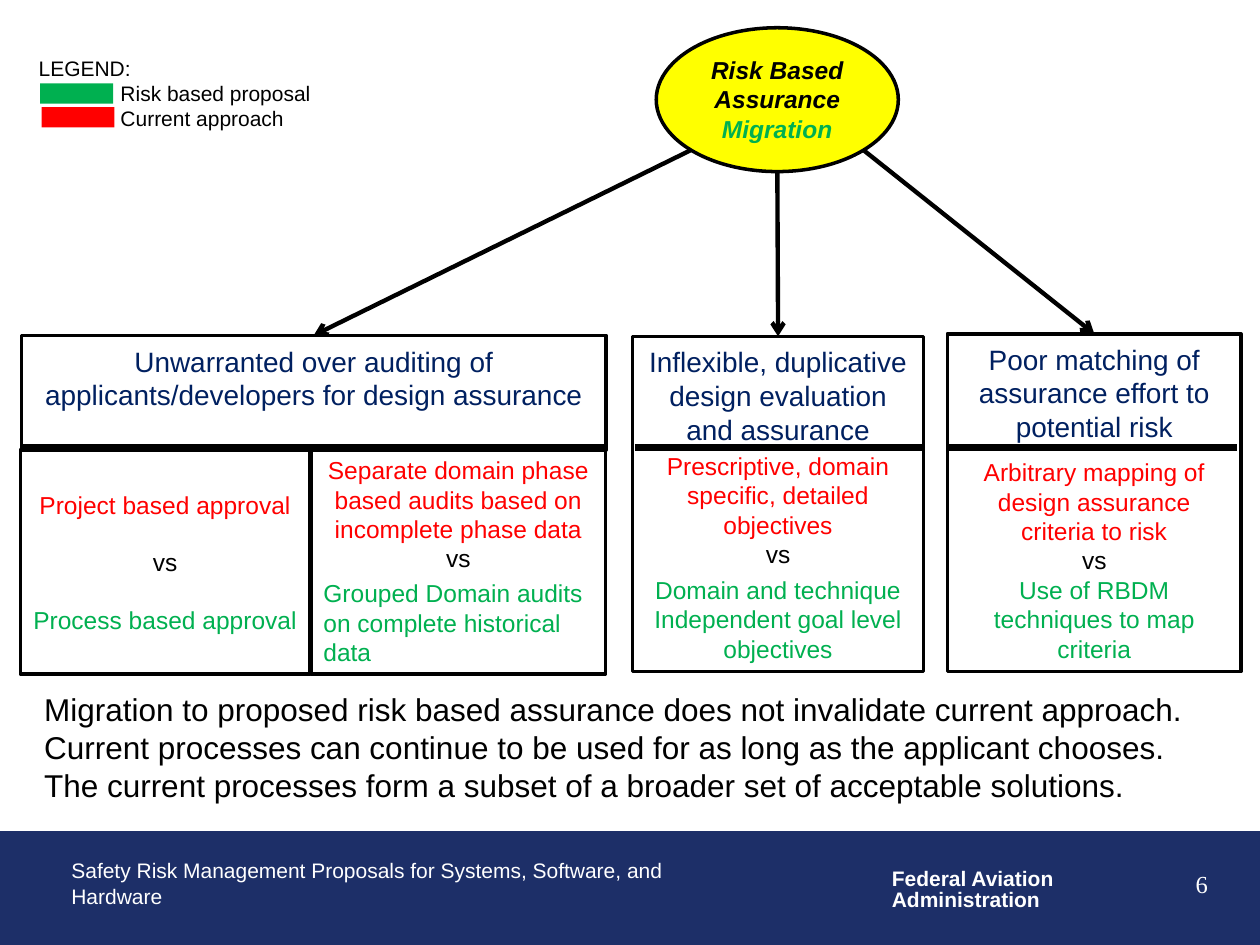
from lxml import etree
from pptx import Presentation
from pptx.dml.color import RGBColor
from pptx.enum.shapes import MSO_CONNECTOR, MSO_SHAPE
from pptx.enum.text import MSO_ANCHOR, PP_ALIGN
from pptx.oxml.ns import qn
from pptx.util import Cm, Pt

RECT, OVAL = MSO_SHAPE.RECTANGLE, MSO_SHAPE.OVAL
STRAIGHT = MSO_CONNECTOR.STRAIGHT
LEFT, CENTER, RIGHT = PP_ALIGN.LEFT, PP_ALIGN.CENTER, PP_ALIGN.RIGHT
TOP, MIDDLE = MSO_ANCHOR.TOP, MSO_ANCHOR.MIDDLE

BLACK, WHITE, NAVY, BAND = "000000", "FFFFFF", "002060", "1D2F68"
RED, GREEN, YELLOW = "FF0000", "00B050", "FFFF00"

# Boxes are (left, top, width, height) in cm.
ROOT_BOX = (13.23, 0.56, 4.88, 2.9)
ROOT_RUNS = [("Risk Based Assurance ", BLACK), ("Migration", GREEN)]

# Each problem: box, heading, space before the comparison, current approach, proposal.
PROBLEMS = [
    ((0.43, 6.76, 11.79, 2.31),
     "Unwarranted over auditing of applicants/developers for design assurance", []),
    ((12.75, 6.78, 5.87, 6.76),
     "Inflexible, duplicative design evaluation and assurance",
     [("Prescriptive, domain specific, detailed objectives", RED, 3, CENTER),
      ("vs", BLACK, 0, CENTER),
      ("Domain and technique Independent goal level objectives", GREEN, 3.5, CENTER)]),
    ((19.1, 6.73, 5.92, 6.81),
     "Poor matching of assurance effort to potential risk",
     [("Arbitrary mapping of design assurance criteria to risk", RED, 8, CENTER),
      ("vs", BLACK, 0, CENTER),
      ("Use of RBDM techniques to map criteria", GREEN, 0, CENTER)]),
]
AUDIT_DETAILS = [
    ((0.41, 9.07, 5.84, 4.52),
     [("Project based approval", RED, 0, CENTER),
      ("vs", BLACK, 16, CENTER),
      ("Process based approval", GREEN, 16, CENTER)]),
    ((6.27, 9.02, 5.94, 4.57),
     [("Separate domain phase based audits based on incomplete phase data",
       RED, 0, CENTER),
      ("vs", BLACK, 0, CENTER),
      ("Grouped Domain audits on complete historical data", GREEN, 3, LEFT)]),
]
ARROW_STARTS = [(13.94, 3.02), (15.67, 3.44), (17.4, 3.02)]
DIVIDERS = [(0.43, 12.19), (12.8, 18.64), (19.1, 24.94)]
DIVIDER_TOP = 9.03

LEGEND = [("Risk based proposal", GREEN, (0.81, 1.68)),
          ("Current approach", RED, (0.84, 2.16))]
SUMMARY = ("Migration to proposed risk based assurance does not invalidate current "
           "approach. Current processes can continue to be used for as long as the "
           "applicant chooses. The current processes form a subset of a broader set "
           "of acceptable solutions.")
FOOTER = "Safety Risk Management Proposals for Systems, Software, and Hardware"
AGENCY = ["Federal Aviation", "Administration"]

prs = Presentation()
prs.slide_width, prs.slide_height = Cm(25.4), Cm(19.05)
slide = prs.slides.add_slide(prs.slide_layouts[6])
shapes = slide.shapes


def rgb(color):
    return RGBColor.from_string(color)


def add_box(box, kind=RECT, fill=None, line=None, width=2):
    shape = shapes.add_shape(kind, *map(Cm, box))
    shape.shadow.inherit = False
    if fill:
        shape.fill.solid()
        shape.fill.fore_color.rgb = rgb(fill)
    else:
        shape.fill.background()
    if line:
        shape.line.color.rgb = rgb(line)
        shape.line.width = Pt(width)
    else:
        shape.line.fill.background()
    return shape


def write(shape, text, size=14, color=BLACK, align=LEFT, before=0, anchor=TOP,
          font="Arial", bold=False, italic=False, spacing=None, indent=0):
    """Add one paragraph; text is a string or a list of (text, color) runs."""
    frame = shape.text_frame
    frame.word_wrap = True
    frame.vertical_anchor = anchor
    first = frame.paragraphs[0]
    paragraph = frame.add_paragraph() if first.runs else first
    paragraph.alignment = align
    paragraph.space_before = Pt(before)
    if spacing:
        paragraph.line_spacing = spacing
    if indent:
        paragraph._p.get_or_add_pPr().set("marL", str(Cm(indent)))
    for words, shade in [(text, color)] if isinstance(text, str) else text:
        run = paragraph.add_run()
        run.text = words
        run.font.name, run.font.size = font, Pt(size)
        run.font.bold, run.font.italic = bold, italic
        run.font.color.rgb = rgb(shade)


def add_text(box, text, **style):
    label = shapes.add_textbox(*map(Cm, box))
    write(label, text, **style)
    return label


def add_line(start, end, width, arrow=False):
    line = shapes.add_connector(STRAIGHT, *map(Cm, start + end))
    line.line.color.rgb = rgb(BLACK)
    line.line.width = Pt(width)
    if arrow:
        etree.SubElement(line.line._get_or_add_ln(), qn("a:tailEnd"), type="arrow")
    etree.SubElement(line._element.spPr, qn("a:effectLst"))
    return line


def write_comparison(card, comparison):
    for text, color, before, align in comparison:
        write(card, text, color=color, before=before, align=align, anchor=MIDDLE)


# Footer band
add_box((0, 16.76, 25.4, 2.29), fill=BAND, line=BAND, width=0.75)
agency = shapes.add_textbox(*map(Cm, (17.73, 17.4, 3.81, 1.12)))
for name in AGENCY:
    write(agency, name, size=12, color=WHITE, bold=True, spacing=0.85)
add_text((1.19, 17.17, 13.28, 1.3), FOOTER, size=12, color=WHITE)
number = add_text((21.13, 17.4, 3.66, 1.65), "6", color=WHITE, align=RIGHT,
                  font="Times New Roman")
number.text_frame.margin_right = Cm(0.44)

# Tree
root = add_box(ROOT_BOX, kind=OVAL, fill=YELLOW, line=BLACK)
write(root, ROOT_RUNS, align=CENTER, bold=True, italic=True)

for box, comparison in AUDIT_DETAILS:
    write_comparison(add_box(box, line=BLACK), comparison)

for (box, heading, comparison), start in zip(PROBLEMS, ARROW_STARTS):
    card = add_box(box, line=BLACK)
    write(card, heading, size=16, color=NAVY, align=CENTER)
    if comparison:
        write_comparison(card, comparison)
    else:
        card.text_frame.margin_top = Cm(0.18)
    left, top, width, _ = box
    arrow = add_line(start, (left + width / 2, top), 2.5, arrow=True)
    arrow.end_connect(card, 0)

for left, right in DIVIDERS:
    add_line((left, DIVIDER_TOP), (right, DIVIDER_TOP), 4)

# Legend and summary
legend = add_text((0.53, 0.99, 7.09, 1.8), "LEGEND:", size=12)
for label, color, corner in LEGEND:
    write(legend, label, size=12, indent=1.65)
    add_box(corner + (1.47, 0.41), fill=color)
add_text((0.64, 13.79, 23.55, 2.57), SUMMARY, size=18)

prs.save("out.pptx")
